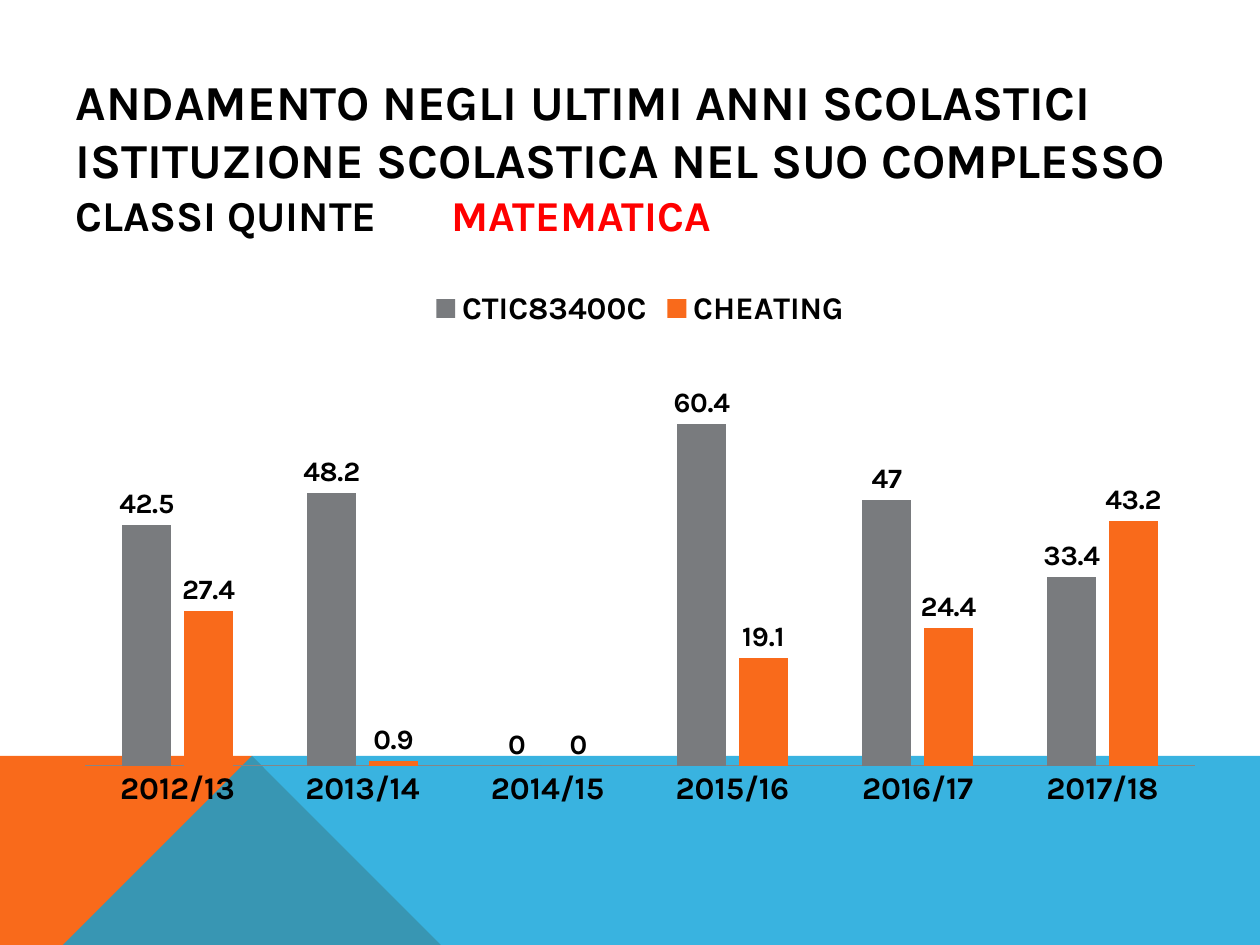
from dataclasses import dataclass

from lxml import etree
from pptx import Presentation
from pptx.chart.data import CategoryChartData
from pptx.dml.color import RGBColor
from pptx.enum.chart import XL_CHART_TYPE, XL_LABEL_POSITION, XL_LEGEND_POSITION, XL_TICK_MARK
from pptx.enum.text import MSO_ANCHOR, MSO_AUTO_SIZE, PP_ALIGN
from pptx.oxml import parse_xml
from pptx.oxml.ns import nsdecls, qn
from pptx.util import Inches, Pt

COLUMNS = XL_CHART_TYPE.COLUMN_CLUSTERED
OUTSIDE = XL_LABEL_POSITION.OUTSIDE_END
TOP = XL_LEGEND_POSITION.TOP
NO_TICK = XL_TICK_MARK.NONE
MIDDLE = MSO_ANCHOR.MIDDLE
NO_FIT = MSO_AUTO_SIZE.NONE
LEFT = PP_ALIGN.LEFT

FONT = "Karla"
COLORS = {
    "black": "000000",
    "red": "FF0000",
    "orange": "F96A1B",
    "blue": "08A1D9",
    "gray": "797B7E",
    "axis": "868686",
}
YEARS = ["2012/13", "2013/14", "2014/15", "2015/16", "2016/17", "2017/18"]


@dataclass
class Band:
    points: list[tuple[float, float]]
    color: str
    alpha: int = 100


@dataclass
class Series:
    name: str
    values: list[float]
    color: str


@dataclass
class Line:
    text: str
    size: float
    accent: str = ""


BANDS = [
    Band([(0, 7.5), (0, 5.52), (2.23, 5.52), (3.91, 7.5)], "orange"),
    Band([(0, 7.5), (2.23, 5.52), (10, 5.53), (10, 7.5)], "blue", 80),
]
SERIES = [
    Series("CTIC83400C", [42.5, 48.2, 0, 60.4, 47, 33.4], "gray"),
    Series("CHEATING", [27.4, 0.9, 0, 19.1, 24.4, 43.2], "orange"),
]
LINES = [
    Line("ANDAMENTO NEGLI ULTIMI ANNI SCOLASTICI", 27.9),
    Line("ISTITUZIONE SCOLASTICA NEL SUO COMPLESSO", 27.9),
    Line("CLASSI QUINTE\t", 24.3, "MATEMATICA"),
]


def rgb(name: str) -> RGBColor:
    return RGBColor.from_string(COLORS[name])


def style(font, size: float, color: str = "black", bold: bool = True) -> None:
    font.name = FONT
    font.size = Pt(size)
    font.bold = bold
    font.color.rgb = rgb(color)


def draw_band(slide, band: Band) -> None:
    start, *rest = band.points
    pen = slide.shapes.build_freeform(*start, scale=Inches(1))
    pen.add_line_segments(rest, close=True)
    shape = pen.convert_to_shape()
    shape.shadow.inherit = False
    shape.line.fill.background()
    shape.fill.solid()
    shape.fill.fore_color.rgb = rgb(band.color)
    if band.alpha < 100:
        tint = shape.fill._xPr.find(".//" + qn("a:srgbClr"))
        etree.SubElement(tint, qn("a:alpha"), val=str(band.alpha * 1000))


def draw_title(slide) -> None:
    title = slide.shapes.title
    title.left, title.top = Inches(0.5), Inches(0.37)
    title.width, title.height = Inches(9), Inches(1.73)
    frame = title.text_frame
    frame.auto_size = NO_FIT
    frame.word_wrap = True
    frame.vertical_anchor = MIDDLE
    frame.text = "\n".join(line.text for line in LINES)
    for par, line in zip(frame.paragraphs, LINES):
        par.alignment = LEFT
        style(par.runs[0].font, line.size)
        if line.accent:
            tabs = etree.SubElement(par._p.get_or_add_pPr(), qn("a:tabLst"))
            etree.SubElement(tabs, qn("a:tab"), pos=str(Inches(2.98)), algn="l")
            run = par.add_run()
            run.text = line.accent
            style(run.font, line.size, "red")
    slide.shapes._spTree.append(title._element)


def set_plot(chart, left: float, top: float, width: float, height: float) -> None:
    """Fix the inner plot area, in shares of the chart."""
    area = chart._chartSpace.chart.plotArea
    for old in area.findall(qn("c:layout")):
        area.remove(old)
    area.insert(0, parse_xml(
        f'<c:layout {nsdecls("c")}><c:manualLayout><c:layoutTarget val="inner"/>'
        '<c:xMode val="edge"/><c:yMode val="edge"/>'
        f'<c:x val="{left}"/><c:y val="{top}"/><c:w val="{width}"/><c:h val="{height}"/>'
        '</c:manualLayout></c:layout>'))


def draw_chart(slide) -> None:
    data = CategoryChartData()
    data.categories = YEARS
    for item in SERIES:
        data.add_series(item.name, item.values)
    chart = slide.shapes.add_chart(
        COLUMNS, Inches(0.67), Inches(2.18), Inches(8.82), Inches(4.57), data).chart
    style(chart.font, 18, bold=False)
    chart.has_title = False
    chart.has_legend = True
    chart.legend.position = TOP
    chart.legend.include_in_layout = False
    style(chart.legend.font, 18)

    years = chart.category_axis
    years.major_tick_mark = NO_TICK
    years.format.line.color.rgb = rgb("axis")
    style(years.tick_labels.font, 18)
    scale = chart.value_axis
    scale.minimum_scale, scale.maximum_scale = 0, 70
    scale.has_major_gridlines = False
    scale.visible = False

    plot = chart.plots[0]
    plot.vary_by_categories = False
    plot.gap_width, plot.overlap = 150, -25
    for bars, item in zip(plot.series, SERIES):
        bars.format.fill.solid()
        bars.format.fill.fore_color.rgb = rgb(item.color)
        labels = bars.data_labels
        labels.show_value = True
        labels.position = OUTSIDE
        style(labels.font, 16)
    set_plot(chart, 0, 0.165, 1, 0.688)


def main() -> None:
    deck = Presentation()
    deck.slide_width, deck.slide_height = Inches(10), Inches(7.5)
    slide = deck.slides.add_slide(deck.slide_layouts[5])
    for band in BANDS:
        draw_band(slide, band)
    draw_title(slide)
    draw_chart(slide)
    deck.save("out.pptx")


if __name__ == "__main__":
    main()
